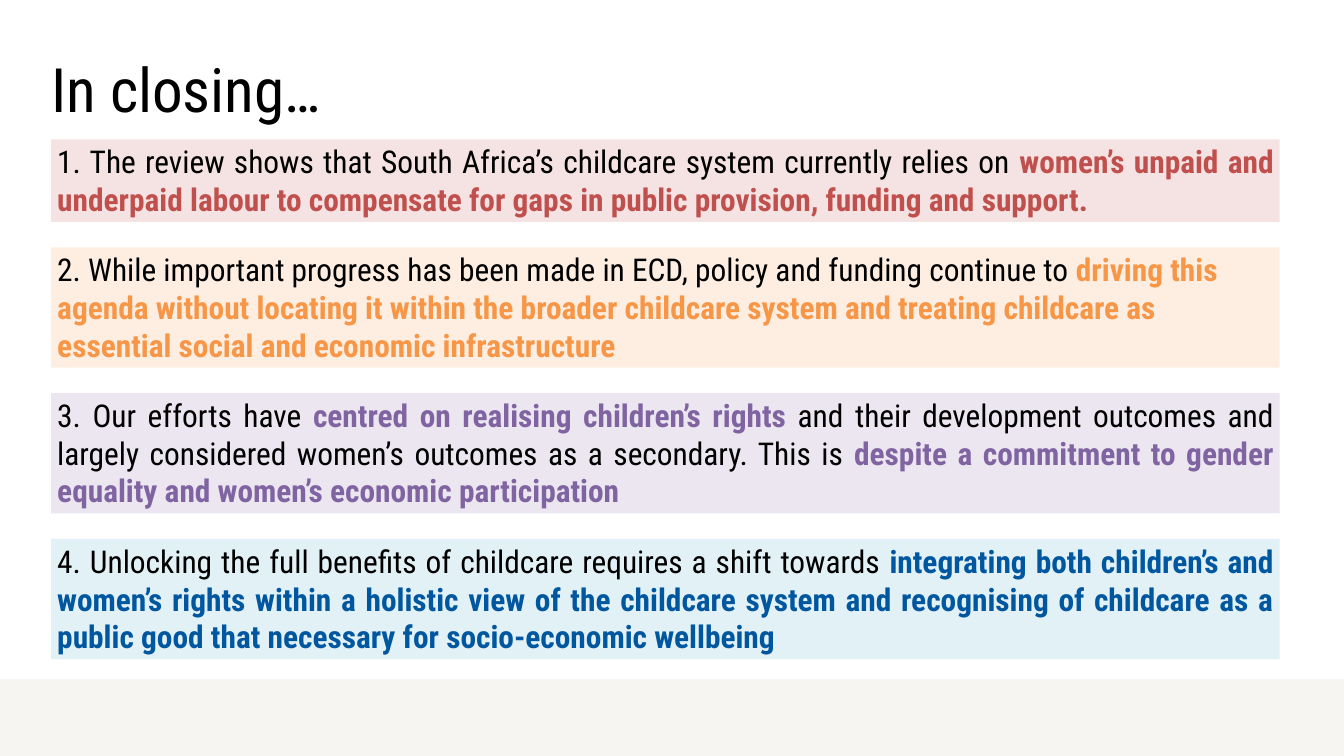
from lxml import etree
from pptx import Presentation
from pptx.dml.color import RGBColor
from pptx.enum import shapes, text
from pptx.oxml.ns import qn
from pptx.util import Cm, Pt

FONT = "Roboto Condensed"
COLOURS = {
    "black": "000000", "footer": "EEEBE3",
    "red": "C0504D", "red tint": "F2DCDB",
    "orange": "F79646", "orange tint": "FDEADA",
    "purple": "8064A2", "purple tint": "E6E0EC",
    "blue": "00579F", "blue tint": "DBEEF4",
}
HEADING = "In closing…"
JUSTIFIED, LEFT_ALIGNED = text.PP_ALIGN.JUSTIFY, text.PP_ALIGN.LEFT
POINTS = [
    ("red", 3.43, JUSTIFIED, [
        ("1. The review shows that South Africa’s childcare system currently relies on ", False),
        ("women’s unpaid and underpaid labour to compensate for gaps in public provision, "
         "funding and support.", True)]),
    ("orange", 5, LEFT_ALIGNED, [
        ("2. While important progress has been made in ECD, policy and funding continue to ", False),
        ("driving this agenda without locating it within the broader childcare system and "
         "treating childcare as essential social and economic infrastructure", True)]),
    ("purple", 5, JUSTIFIED, [
        ("3. Our efforts have ", False),
        ("centred on realising children’s rights ", True),
        ("and their development outcomes and largely considered women’s outcomes as a "
         "secondary. This is ", False),
        ("despite a commitment to gender equality and women’s economic participation", True)]),
    ("blue", 5, JUSTIFIED, [
        ("4. Unlocking the full benefits of childcare requires a shift towards ", False),
        ("integrating both children’s and women’s rights within a holistic view of the "
         "childcare system and recognising of childcare as a public good that necessary for "
         "socio-economic wellbeing", True)]),
]
SLIDE_WIDTH, SLIDE_HEIGHT = 55.85, 31.42
FOOTER_TOP = 28.23
MARGIN, POINT_WIDTH = 2.13, 51.05
POINTS_TOP, GAP = 5.79, 1.06


def colour(name):
    return RGBColor.from_string(COLOURS[name])


def add_panel(slide, left, top, width, height, tint, opacity):
    panel = slide.shapes.add_shape(shapes.MSO_SHAPE.RECTANGLE,
                                   Cm(left), Cm(top), Cm(width), Cm(height))
    panel.shadow.inherit = False
    panel.line.fill.background()
    panel.fill.solid()
    panel.fill.fore_color.rgb = colour(tint)
    shade = panel.fill._xPr.find(qn("a:solidFill"))[0]
    etree.SubElement(shade, qn("a:alpha")).set("val", str(opacity * 1000))
    return panel


def add_heading(slide):
    heading = slide.shapes.add_textbox(Cm(MARGIN), Cm(MARGIN), Cm(47.47), Cm(3.07))
    frame = heading.text_frame
    frame.word_wrap = True
    frame.vertical_anchor = text.MSO_ANCHOR.MIDDLE
    frame.margin_left = frame.margin_right = frame.margin_top = frame.margin_bottom = 0
    title = frame.paragraphs[0]
    title.text = HEADING
    title.font.name, title.font.size = FONT, Pt(72)
    title.font.color.rgb = colour("black")


def add_point(slide, top, accent, height, alignment, phrases):
    panel = add_panel(slide, MARGIN, top, POINT_WIDTH, height, f"{accent} tint", 80)
    frame = panel.text_frame
    frame.word_wrap = True
    frame.vertical_anchor = text.MSO_ANCHOR.TOP
    statement = frame.paragraphs[0]
    statement.alignment = alignment
    statement.font.name, statement.font.size = FONT, Pt(37)
    for words, stressed in phrases:
        phrase = statement.add_run()
        phrase.text = words
        phrase.font.bold = stressed
        phrase.font.color.rgb = colour(accent if stressed else "black")


def main():
    deck = Presentation()
    deck.slide_width, deck.slide_height = Cm(SLIDE_WIDTH), Cm(SLIDE_HEIGHT)
    slide = deck.slides.add_slide(deck.slide_layouts[6])
    add_panel(slide, 0, FOOTER_TOP, SLIDE_WIDTH, SLIDE_HEIGHT - FOOTER_TOP, "footer", 46)
    add_heading(slide)
    top = POINTS_TOP
    for accent, height, alignment, phrases in POINTS:
        add_point(slide, top, accent, height, alignment, phrases)
        top += height + GAP
    deck.save("out.pptx")


if __name__ == "__main__":
    main()
